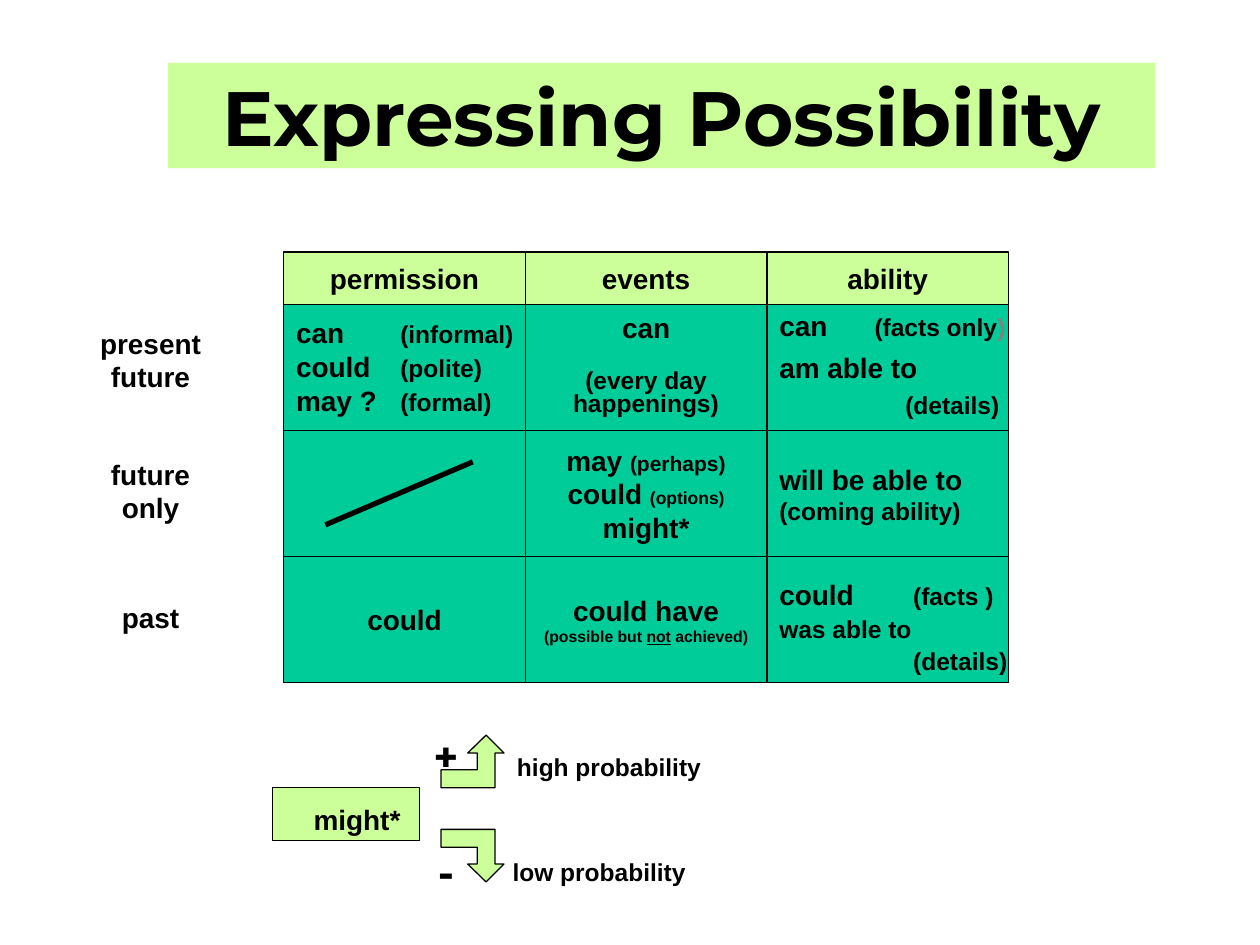
from lxml.etree import SubElement
from pptx import Presentation
from pptx.dml.color import RGBColor
from pptx.enum.shapes import MSO_CONNECTOR, MSO_SHAPE
from pptx.enum.text import MSO_ANCHOR, PP_ALIGN
from pptx.oxml.ns import qn
from pptx.util import Cm, Pt

COLOURS = {"lime": "CCFF99", "teal": "00CC99", "ink": "000000", "grey": "808080"}


def paint(shape, fill, outlined=True):
    shape.shadow.inherit = False
    shape.fill.solid()
    shape.fill.fore_color.rgb = RGBColor.from_string(COLOURS[fill])
    if outlined:
        shape.line.color.rgb = RGBColor.from_string(COLOURS["ink"])
        shape.line.width = Pt(0.75)
    else:
        shape.line.fill.background()


def write(shape, paragraphs, align=PP_ALIGN.CENTER, anchor=MSO_ANCHOR.MIDDLE,
          spacings=(), tab=None, font="Arial", wrap=True):
    frame = shape.text_frame
    frame.word_wrap = wrap
    frame.vertical_anchor = anchor
    for index, runs in enumerate(paragraphs):
        paragraph = frame.paragraphs[0] if index == 0 else frame.add_paragraph()
        if tab:
            stops = SubElement(paragraph._p.get_or_add_pPr(), qn("a:tabLst"))
            SubElement(stops, qn("a:tab"), pos=str(Cm(tab)), algn="l")
        paragraph.alignment = align
        if spacings:
            paragraph.line_spacing = spacings[index]
        for text, size, *style in runs:
            run = paragraph.add_run()
            run.text = text
            run.font.name = font
            run.font.size = Pt(size)
            run.font.bold = True
            run.font.color.rgb = RGBColor.from_string(
                COLOURS["grey" if "grey" in style else "ink"])
            if "underline" in style:
                run.font.underline = True


prs = Presentation()
prs.slide_width, prs.slide_height = Cm(25.4), Cm(19.05)
slide = prs.slides.add_slide(prs.slide_layouts[6])
shapes = slide.shapes

title = shapes.add_shape(MSO_SHAPE.RECTANGLE, Cm(3.39), Cm(1.27), Cm(19.9), Cm(2.12))
paint(title, "lime", outlined=False)
write(title, [[("Expressing Possibility", 44)]], font="Montserrat", anchor=MSO_ANCHOR.TOP)

GRID_LEFT, GRID_TOP, COLUMN, HEADER, ROW = 5.72, 5.08, 4.87, 1.06, 2.54
LEFT = PP_ALIGN.LEFT
headings = [([[(name, 16)]], {}) for name in ("permission", "events", "ability")]
present = [
    ([[("can", 16), ("\t", 20), ("(informal)", 14)],
      [("could", 16), ("\t", 20), ("(polite)", 14)],
      [("may ?", 16), ("\t", 20), ("(formal)", 14)]],
     {"align": LEFT, "spacings": (0.8, 0.8, 0.8), "tab": 2.1}),
    ([[("can", 16)], [("(every day", 14)], [("happenings)", 14)]],
     {"spacings": (0.8, 0.8, 0.8)}),
    ([[("can", 16), ("\t", 20), ("(facts only", 14), (")", 14, "grey")],
      [("am able to", 16)],
      [("\t", 14), ("(details)", 14)]],
     {"align": LEFT, "spacings": (1.2, 1.2, 1.2), "tab": 1.92}),
]
future = [
    ([], {}),
    ([[("may ", 16), ("(perhaps)", 12)], [("could ", 16), ("(options)", 10)],
      [("might*", 16)]], {}),
    ([[("will be able to", 16)], [("(coming ability)", 14)]], {"align": LEFT}),
]
past = [
    ([[("could", 16)]], {}),
    ([[("could have", 16)],
      [("(possible but ", 9), ("not", 9, "underline"), (" achieved)", 9)]], {}),
    ([[("could", 16), ("\t", 16), ("(facts )", 14)],
      [("was able to", 14)],
      [("\t", 14), ("(details)", 14)]],
     {"align": LEFT, "spacings": (1.4, 1.1, 1.1), "tab": 2.7}),
]

cells = {}
for row, contents in enumerate((headings, present, future, past)):
    top = GRID_TOP if row == 0 else GRID_TOP + HEADER + (row - 1) * ROW
    for column, (paragraphs, layout) in enumerate(contents):
        cell = shapes.add_shape(MSO_SHAPE.RECTANGLE, Cm(GRID_LEFT + column * COLUMN), Cm(top),
                                Cm(COLUMN), Cm(ROW if row else HEADER))
        paint(cell, "teal" if row else "lime")
        write(cell, paragraphs, **layout)
        if "align" in layout:
            cell.text_frame.margin_right = 0
        cells[row, column] = cell

cells[1, 1].text_frame.paragraphs[1].space_before = Pt(15)
cells[1, 2].text_frame.margin_bottom = Cm(0.58)
facts_details = cells[1, 2].text_frame.paragraphs[2]
facts_details._p.pPr.find(qn("a:tabLst"))[0].set("pos", str(Cm(2.54)))

for top, words in ((6.25, ("present", "future")), (8.89, ("future", "only")), (11.43, ("past",))):
    period = shapes.add_textbox(Cm(1.42), Cm(top), Cm(3.23), Cm(2.01))
    write(period, [[(word, 16)] for word in words])

not_used = shapes.add_connector(MSO_CONNECTOR.STRAIGHT, Cm(6.56), Cm(10.58), Cm(9.53), Cm(9.31))
not_used.line.color.rgb = RGBColor.from_string(COLOURS["ink"])
not_used.line.width = Pt(3)
SubElement(not_used._element.spPr, qn("a:effectLst"))

might_box = shapes.add_shape(MSO_SHAPE.RECTANGLE, Cm(5.5), Cm(15.88), Cm(2.96), Cm(1.06))
paint(might_box, "lime")

ARROW = [(0.91, 0), (0.54, 0.36), (0.73, 0.36), (0.73, 0.7), (0, 0.7),
         (0, 1.06), (1.09, 1.06), (1.09, 0.36), (1.27, 0.36)]
for tip, direction in ((14.82, 1), (17.78, -1)):
    outline = [(Cm(8.89 + x), Cm(tip + direction * y)) for x, y in ARROW]
    builder = shapes.build_freeform(*outline[0], scale=1.0)
    builder.add_line_segments(outline[1:], close=True)
    paint(builder.convert_to_shape(), "lime")

for left, top, width, height, text, size, font in (
    (6.07, 16.05, 2.26, 0.94, "might*", 16, "Arial"),
    (8.69, 17.15, 6.78, 0.85, "low probability", 14, "Arial"),
    (8.89, 15.04, 6.78, 0.85, "high probability", 14, "Arial"),
    (8.46, 14.6, 1.06, 1.27, "+", 24, "Montserrat"),
    (8.46, 16.94, 1.06, 1.27, "-", 24, "Montserrat"),
):
    caption = shapes.add_textbox(Cm(left), Cm(top), Cm(width), Cm(height))
    write(caption, [[(text, size)]], font=font, anchor=MSO_ANCHOR.TOP, wrap=len(text) > 6)

prs.save("out.pptx")
